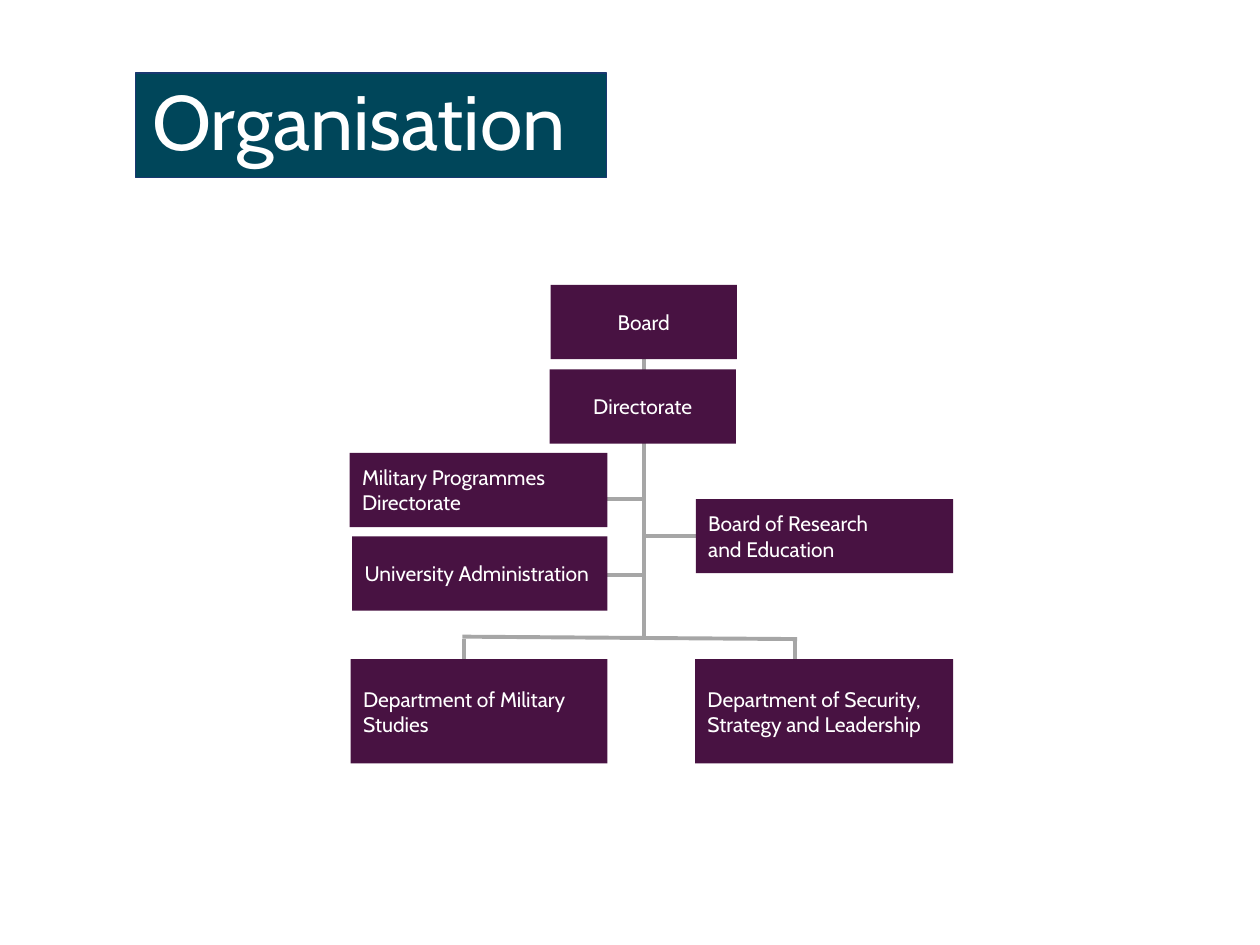
"""Build a slide with the organisation chart of a university."""
from lxml import etree
from pptx import Presentation
from pptx.dml.color import RGBColor
from pptx.enum import shapes, text
from pptx.oxml.ns import qn
from pptx.util import Pt

WHITE = RGBColor(0xFF, 0xFF, 0xFF)
TEAL = RGBColor(0x00, 0x46, 0x5A)
NAVY = RGBColor(0x19, 0x38, 0x70)
PLUM = RGBColor(0x48, 0x12, 0x42)
GREY = RGBColor(0xA6, 0xA6, 0xA6)
FONT = "Cabin"


def add_line(slide, start_x, start_y, end_x, end_y):
    line = slide.shapes.add_connector(
        shapes.MSO_CONNECTOR.STRAIGHT, Pt(start_x), Pt(start_y), Pt(end_x), Pt(end_y)
    )
    line.line.color.rgb = GREY
    line.line.width = Pt(2.25)
    etree.SubElement(line._element.spPr, qn("a:effectLst"))
    return line


def add_box(slide, label, left, top, width, height, fill, size, alignment):
    box = slide.shapes.add_shape(
        shapes.MSO_SHAPE.RECTANGLE, Pt(left), Pt(top), Pt(width), Pt(height)
    )
    box.shadow.inherit = False
    box.fill.solid()
    box.fill.fore_color.rgb = fill
    box.line.fill.background()
    box.text_frame.word_wrap = True
    box.text_frame.vertical_anchor = text.MSO_ANCHOR.MIDDLE
    box.text_frame.text = label
    for paragraph in box.text_frame.paragraphs:
        paragraph.alignment = alignment
        for run in paragraph.runs:
            run.font.name = FONT
            run.font.size = Pt(size)
            run.font.color.rgb = WHITE
    return box


presentation = Presentation()
presentation.slide_width = Pt(720)
presentation.slide_height = Pt(540)
slide = presentation.slides.add_slide(presentation.slide_layouts[6])

LEFT = text.PP_ALIGN.LEFT
CENTER = text.PP_ALIGN.CENTER
TRUNK_X = 367.9
BRANCH_Y = 365

for drop_x in (454.3, 265):
    add_line(slide, drop_x, BRANCH_Y, drop_x, 377.3)
for branch_y, end_x in ((306.5, 425.5), (285.1, 310.3), (328.8, 310.3)):
    add_line(slide, TRUNK_X, branch_y, end_x, branch_y)
trunk = add_line(slide, TRUNK_X, 205.2, TRUNK_X, BRANCH_Y)

title = add_box(slide, "Organisation", 77.5, 41.8, 269.2, 59.8, TEAL, 44, LEFT)
title.line.color.rgb = NAVY
title.line.width = Pt(0.75)
title.text_frame.margin_left = Pt(9.5)
title.text_frame.margin_right = title.text_frame.margin_top = 0
title.text_frame.margin_bottom = 0
title.text_frame.paragraphs[0].line_spacing = 0.9

units = [
    ("Board", 314.7, 162.8, 106.4, 42.4, CENTER),
    ("Directorate", 314.1, 211.1, 106.4, 42.4, CENTER),
    ("Military Programmes Directorate", 199.8, 258.8, 147.3, 42.4, LEFT),
    ("University Administration", 201.3, 306.6, 145.8, 42.4, LEFT),
    ("Department of Military\vStudies", 200.4, 376.6, 146.7, 59.6, LEFT),
    ("Department of Security, Strategy and Leadership", 397.2, 376.6, 147.5, 59.6, LEFT),
    ("Board of Research\nand Education", 397.6, 285.2, 147.1, 42.4, LEFT),
]
boxes = {}
for label, left, top, width, height, alignment in units:
    boxes[label] = add_box(slide, label, left, top, width, height, PLUM, 12, alignment)

trunk.begin_connect(boxes["Board"], 2)
add_line(slide, 455.5, 365.2, 264.2, 363.8)

presentation.save("out.pptx")
